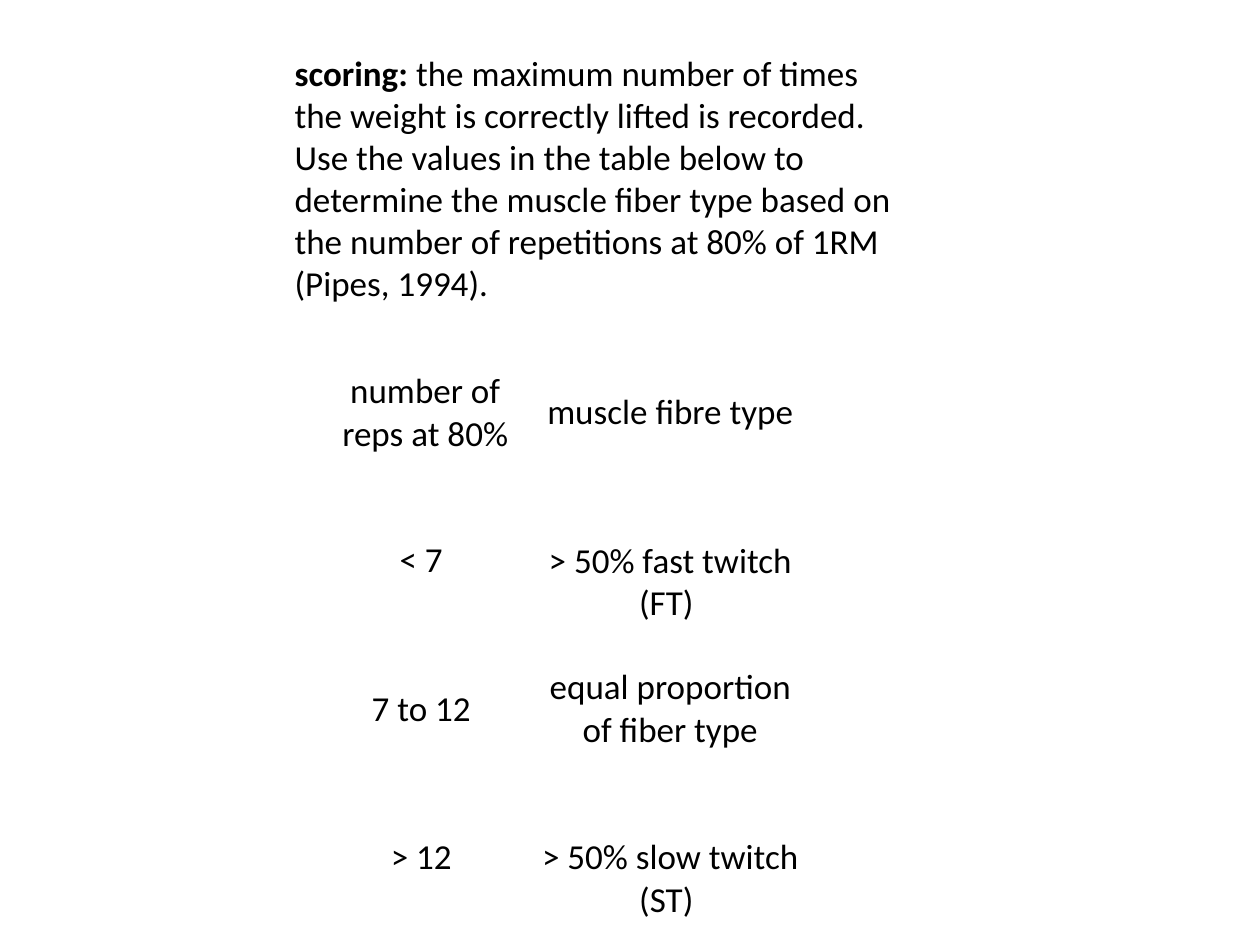
from dataclasses import dataclass

from pptx import Presentation
from pptx.dml.color import RGBColor
from pptx.enum.text import MSO_ANCHOR, PP_ALIGN
from pptx.util import Inches, Pt

CENTER = PP_ALIGN.CENTER
MIDDLE = MSO_ANCHOR.MIDDLE


@dataclass(frozen=True)
class Theme:
    font: str = "Calibri"
    size: float = 20
    ink: str = "000000"
    grid: float = 0.1


class Deck:
    def __init__(self, prs, theme):
        self.theme = theme
        self.s = prs.slides.add_slide(prs.slide_layouts[6])

    def units(self, *values):
        return [Inches(v * self.theme.grid) for v in values]

    def style(self, p):
        p.font.name = self.theme.font
        p.font.size = Pt(self.theme.size)
        p.font.color.rgb = RGBColor.from_string(self.theme.ink)

    def text(self, box, runs):
        tf = self.s.shapes.add_textbox(*self.units(*box)).text_frame
        tf.word_wrap = True
        p = tf.paragraphs[0]
        self.style(p)
        for text, bold in runs:
            r = p.add_run()
            r.text = text
            r.font.bold = bold

    def table(self, left, top, cols, rows, cells, lowered):
        box = self.units(left, top, sum(cols), sum(rows))
        table = self.s.shapes.add_table(len(rows), len(cols), *box).table
        table.first_row = table.horz_banding = False
        for col, width in zip(table.columns, self.units(*cols)):
            col.width = width
        for row, height in zip(table.rows, self.units(*rows)):
            row.height = height
        for i, texts in enumerate(cells):
            for j, text in enumerate(texts):
                cell = table.cell(i, j)
                cell.fill.background()
                cell.vertical_anchor = MIDDLE
                if (i, j) in lowered:
                    cell.margin_top += Pt(self.theme.size * 1.2)
                p = cell.text_frame.paragraphs[0]
                p.text = text
                p.alignment = CENTER
                self.style(p)


def main():
    prs = Presentation()
    prs.slide_width, prs.slide_height = Inches(10), Inches(7.5)
    deck = Deck(prs, Theme())
    deck.text((22.4, 3.6, 50, 21.2), [
        ("scoring: ", True),
        ("the maximum number of times the weight is correctly lifted is "
         "recorded. Use the values in the table below to determine the muscle "
         "fiber type based on the number of repetitions at 80% of 1RM "
         "(Pipes, 1994).", False),
    ])
    deck.table(25.6, 26.5, [16.3, 22.6], [12.5, 11.05] * 2, [
        ("number of reps at 80%", "muscle fibre type"),
        ("< 7 ", "> 50% fast twitch (FT) "),
        ("7 to 12 ", "equal proportion of fiber type"),
        ("> 12 ", "> 50% slow twitch (ST) "),
    ], lowered={(1, 1), (3, 1)})
    prs.save("out.pptx")


if __name__ == "__main__":
    main()
